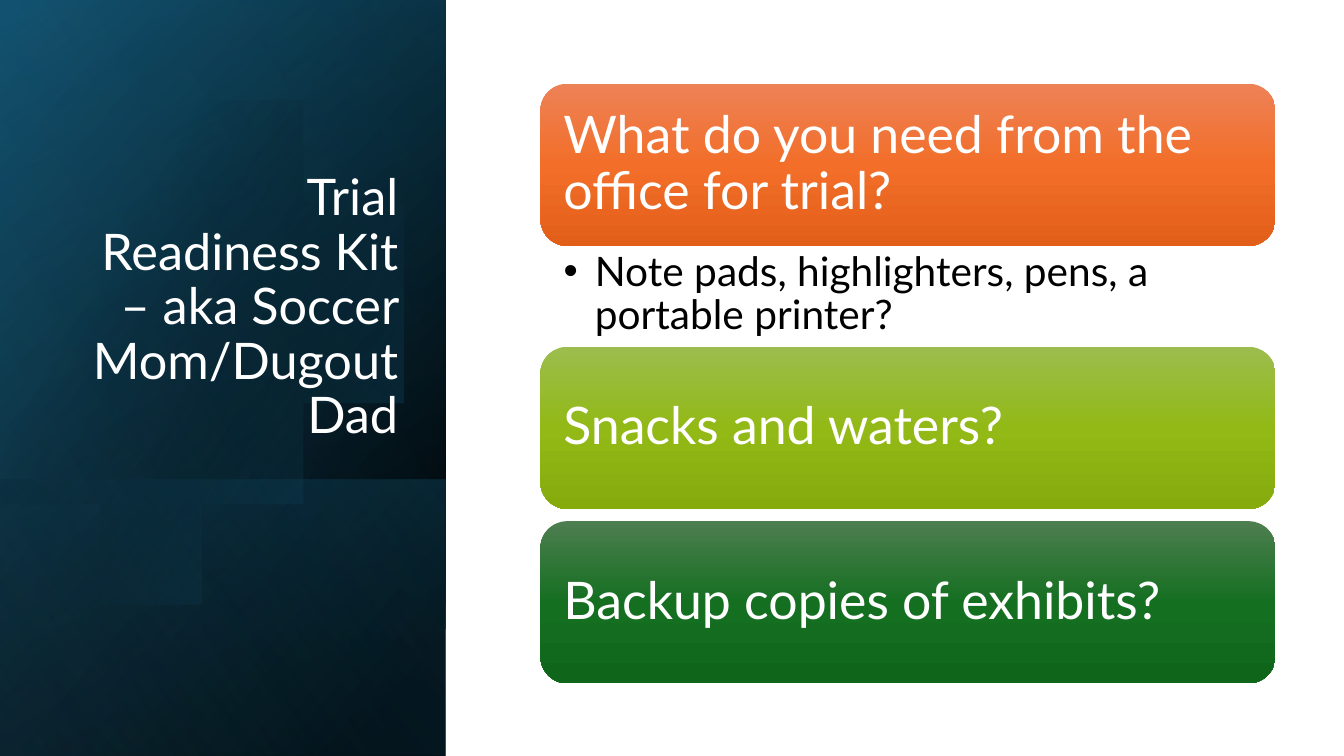
import math

from lxml import etree
from pptx import Presentation
from pptx import util as u
from pptx.dml.color import RGBColor
from pptx.enum import shapes, text
from pptx.oxml import parse_xml
from pptx.oxml.ns import nsdecls, qn

COLORS = {
    "white": "FFFFFF", "black": "000000", "teal": "156082",
    "deep": "104862", "sky": "46B1E1",
    "orange": ("ED8257", "F26E29", "E25F1A"),
    "lime": ("9CBD4E", "92B916", "85AB0D"),
    "green": ("4D7E50", "156F21", "0F661B"),
}
FONT = "Lato"
WIDTH, HEIGHT = 13.33, 7.5
PANEL_WIDTH = 4.42


def paint_gradient(shape, stops, angle):
    """Fill with (position %, colour, opacity %) stops, without line or shadow."""
    marks = "".join(
        f'<a:gs pos="{position * 1000}"><a:srgbClr val="{color}">'
        f'<a:alpha val="{opacity * 1000}"/></a:srgbClr></a:gs>'
        for position, color, opacity in stops)
    shape.shadow.inherit = False
    shape.line.fill.background()
    shape.fill.background()
    properties = shape._element.spPr
    properties.replace(properties.find(qn("a:noFill")), parse_xml(
        f'<a:gradFill {nsdecls("a")} rotWithShape="1"><a:gsLst>{marks}</a:gsLst>'
        f'<a:lin ang="{angle * 60000}" scaled="0"/></a:gradFill>'))


def write(box, words, size, color):
    frame = box.text_frame
    frame.text = words
    frame.word_wrap = True
    frame.auto_size = text.MSO_AUTO_SIZE.NONE
    para = frame.paragraphs[0]
    para.line_spacing = 0.9
    para.space_before = u.Pt(0)
    font = para.runs[0].font
    font.name, font.size = FONT, u.Pt(size)
    font.color.rgb = RGBColor.from_string(COLORS[color])
    return frame, para


deck = Presentation()
deck.slide_width, deck.slide_height = u.Inches(WIDTH), u.Inches(HEIGHT)
page = deck.slides.add_slide(deck.slide_layouts[1])
title, body = page.placeholders

# Left panel: quarter-turned gradient layers, with a disc below the top one
black, teal = COLORS["black"], COLORS["teal"]
layers = [
    (0, HEIGHT, [(8, black, 100), (100, COLORS["deep"], 100)], 50),
    (0, HEIGHT, [(0, black, 0), (99, teal, 46)], 30),
    (4.76, 2.74, [(2, teal, 29), (100, black, 30)], 130),
    (0, HEIGHT, [(0, black, 0), (99, COLORS["sky"], 11)], 120),
]
for number, (top, depth, stops, angle) in enumerate(layers):
    if number == len(layers) - 1:
        center_x, center_y, radius = 1.49, 3.35, 2.25
        reach = math.acos(-center_x / radius)
        turns = [reach * (step / 60 - 1) for step in range(121)]
        rim = [(center_x + radius * math.cos(turn),
                center_y + radius * math.sin(turn)) for turn in turns]
        outline = page.shapes.build_freeform(*rim[0], scale=u.Inches(1))
        outline.add_line_segments(rim[1:], close=True)
        paint_gradient(outline.convert_to_shape(),
                       [(29, black, 0), (100, teal, 43)], 30)
    layer = page.shapes.add_shape(
        shapes.MSO_SHAPE.RECTANGLE,
        u.Inches((PANEL_WIDTH - depth) / 2),
        u.Inches(top + (depth - PANEL_WIDTH) / 2),
        u.Inches(depth), u.Inches(PANEL_WIDTH))
    layer.rotation = 90
    layer._element.spPr.xfrm.set("flipH", "1")
    paint_gradient(layer, stops, angle)

# Title, in front of the panel
page.shapes._spTree.append(title._element)
title.left, title.top = u.Inches(0.64), u.Inches(1.84)
title.width, title.height = u.Inches(3.41), u.Inches(2.62)
frame, para = write(title, "Trial Readiness Kit – aka Soccer Mom/Dugout Dad", 36, "white")
frame.vertical_anchor = text.MSO_ANCHOR.BOTTOM
para.alignment = text.PP_ALIGN.RIGHT

# Stack of cards, with the list under the first one
left, card_width, card_height = 5.36, 7.29, 1.61
list_height, gap = 1.0, 0.12
cards = [
    ("What do you need from the office for trial?", "orange", list_height),
    ("Snacks and waters?", "lime", gap),
    ("Backup copies of exhibits?", "green", gap),
]
top = 0.83
for words, shade, space_below in cards:
    card = page.shapes.add_shape(
        shapes.MSO_SHAPE.ROUNDED_RECTANGLE, u.Inches(left), u.Inches(top),
        u.Inches(card_width), u.Inches(card_height))
    paint_gradient(card, [(50 * step, color, 100)
                          for step, color in enumerate(COLORS[shade])], 90)
    frame, para = write(card, words, 37, "white")
    frame.margin_left = frame.margin_right = u.Inches(0.15)
    frame.vertical_anchor = text.MSO_ANCHOR.MIDDLE
    para.alignment = text.PP_ALIGN.LEFT
    top += card_height + space_below

body.left, body.top = u.Inches(left), u.Inches(0.83 + card_height)
body.width, body.height = u.Inches(card_width), u.Inches(list_height)
frame, para = write(body, "Note pads, highlighters, pens, a portable printer?", 29, "black")
frame.margin_left, frame.margin_right = u.Inches(0.23), u.Inches(0.29)
frame.vertical_anchor = text.MSO_ANCHOR.TOP
settings = para._p.get_or_add_pPr()
settings.set("marL", str(u.Inches(0.31)))
settings.set("indent", str(-u.Inches(0.31)))
etree.SubElement(settings, qn("a:buChar")).set("char", "•")

deck.save("out.pptx")
